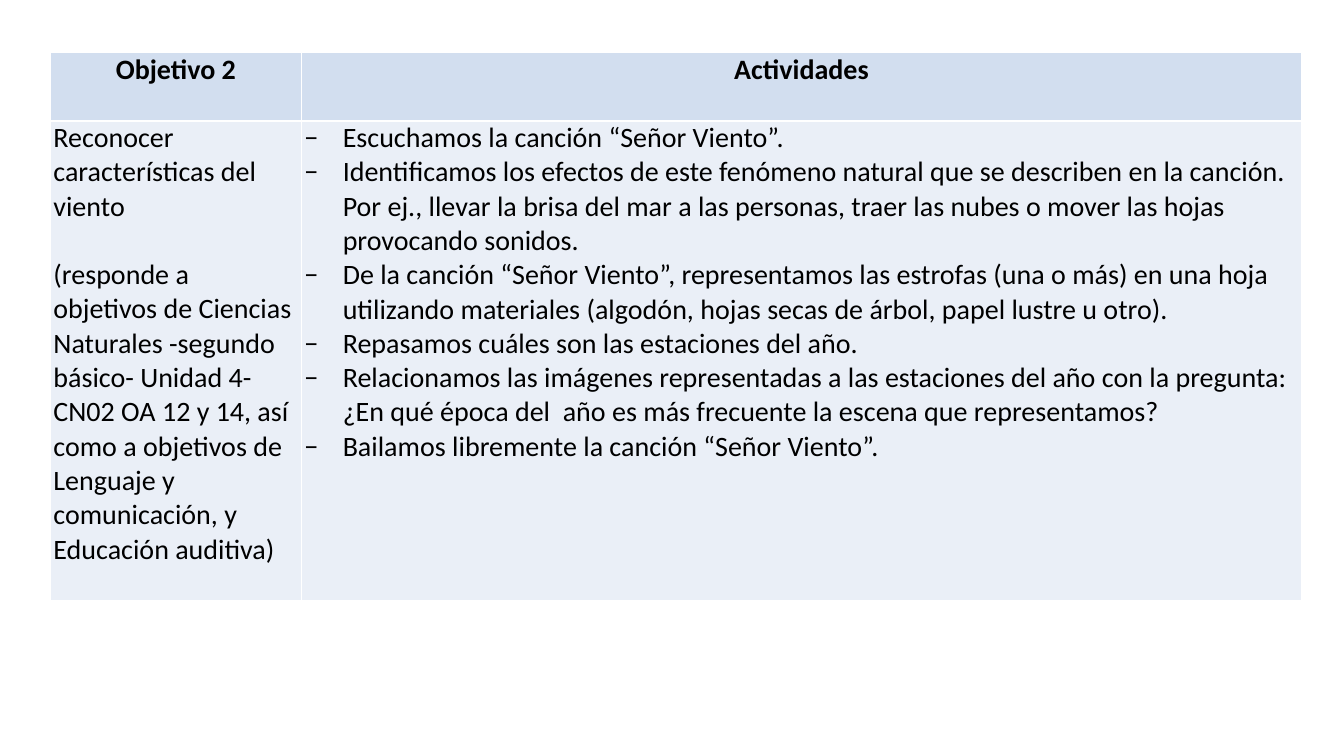
"""Build the slide with the table of activities for objective 2."""
from lxml import etree
from pptx import Presentation
from pptx.dml.color import RGBColor
from pptx.enum.text import PP_ALIGN
from pptx.oxml import parse_xml
from pptx.oxml.ns import nsdecls, qn
from pptx.util import Inches, Pt

CENTER = PP_ALIGN.CENTER
LEFT = PP_ALIGN.LEFT

COLUMN_WIDTHS = (2.49, 9.92)
ROW_HEIGHTS = (0.68, 4.76)
HEADER_FILL = "D2DEEF"
BODY_FILL = "EAEFF7"
BORDER_COLOUR = "FFFFFF"
TEXT_COLOUR = "000000"
BULLET = "−"
BULLET_INDENT = Inches(0.38)
LINE_GAP = Pt(24.4)

HEADERS = ("Objetivo 2", "Actividades")
OBJECTIVE = (
    "Reconocer características del viento",
    "(responde a objetivos de Ciencias Naturales -segundo básico- Unidad 4- "
    "CN02 OA 12 y 14, así como a objetivos de Lenguaje y comunicación, y "
    "Educación auditiva)",
)
ACTIVITIES = (
    "Escuchamos la canción “Señor Viento”.",
    "Identificamos los efectos de este fenómeno natural que se describen en la "
    "canción. Por ej., llevar la brisa del mar a las personas, traer las nubes "
    "o mover las hojas provocando sonidos.",
    "De la canción “Señor Viento”, representamos las estrofas (una o más) en "
    "una hoja utilizando materiales (algodón, hojas secas de árbol, papel "
    "lustre u otro).",
    "Repasamos cuáles son las estaciones del año.",
    "Relacionamos las imágenes representadas a las estaciones del año con la "
    "pregunta: ¿En qué época del  año es más frecuente la escena que "
    "representamos?",
    "Bailamos libremente la canción “Señor Viento”.",
)


def colour(value):
    """Return the colour for a hex string."""
    return RGBColor.from_string(value)


def set_attributes(target, values):
    """Set each named value on the target."""
    for name, value in values.items():
        setattr(target, name, value)


def add_bullet(paragraph):
    """Give the paragraph a dash bullet with a hanging indent."""
    properties = paragraph._p.get_or_add_pPr()
    properties.set("marL", str(BULLET_INDENT))
    properties.set("indent", str(-BULLET_INDENT))
    font = etree.SubElement(properties, qn("a:buFont"))
    font.set("typeface", "Calibri")
    etree.SubElement(properties, qn("a:buChar")).set("char", BULLET)


def add_borders(cell):
    """Draw a thin line on all four sides of the cell."""
    properties = cell._tc.get_or_add_tcPr()
    for position, side in enumerate(("lnL", "lnR", "lnT", "lnB")):
        line = parse_xml(
            f'<a:{side} {nsdecls("a")} w="{Pt(1)}"><a:solidFill>'
            f'<a:srgbClr val="{BORDER_COLOUR}"/></a:solidFill></a:{side}>'
        )
        properties.insert(position, line)


def fill_cell(cell, texts, fill, bold=False, align=LEFT, bulleted=False, gap=Pt(0)):
    """Format the cell and write one paragraph for each text."""
    set_attributes(cell, {
        "margin_left": Inches(0.03), "margin_right": Inches(0.03),
        "margin_top": 0, "margin_bottom": 0,
    })
    cell.fill.solid()
    cell.fill.fore_color.rgb = colour(fill)
    add_borders(cell)
    for index, text in enumerate(texts):
        frame = cell.text_frame
        paragraph = frame.add_paragraph() if index else frame.paragraphs[0]
        set_attributes(paragraph, {
            "alignment": align, "space_before": gap if index else Pt(0),
        })
        if bulleted:
            add_bullet(paragraph)
        run = paragraph.add_run()
        run.text = text
        set_attributes(run.font, {"name": "Calibri", "size": Pt(20), "bold": bold})
        run.font.color.rgb = colour(TEXT_COLOUR)


def add_activity_table(slide):
    """Add the empty table with its column widths and row heights."""
    table = slide.shapes.add_table(
        len(ROW_HEIGHTS), len(COLUMN_WIDTHS), Inches(0.5), Inches(0.52),
        Inches(sum(COLUMN_WIDTHS)), Inches(sum(ROW_HEIGHTS)),
    ).table
    set_attributes(table, {"first_row": False, "horz_banding": False})
    for column, width in zip(table.columns, COLUMN_WIDTHS):
        column.width = Inches(width)
    for row, height in zip(table.rows, ROW_HEIGHTS):
        row.height = Inches(height)
    return table


def main():
    """Build and save the presentation."""
    presentation = Presentation()
    set_attributes(presentation, {
        "slide_width": Inches(13.33), "slide_height": Inches(7.5),
    })
    slide = presentation.slides.add_slide(presentation.slide_layouts[6])
    table = add_activity_table(slide)
    for column, header in enumerate(HEADERS):
        fill_cell(table.cell(0, column), [header], HEADER_FILL, bold=True, align=CENTER)
    fill_cell(table.cell(1, 0), OBJECTIVE, BODY_FILL, gap=LINE_GAP)
    fill_cell(table.cell(1, 1), ACTIVITIES, BODY_FILL, bulleted=True)
    presentation.save("out.pptx")


if __name__ == "__main__":
    main()
